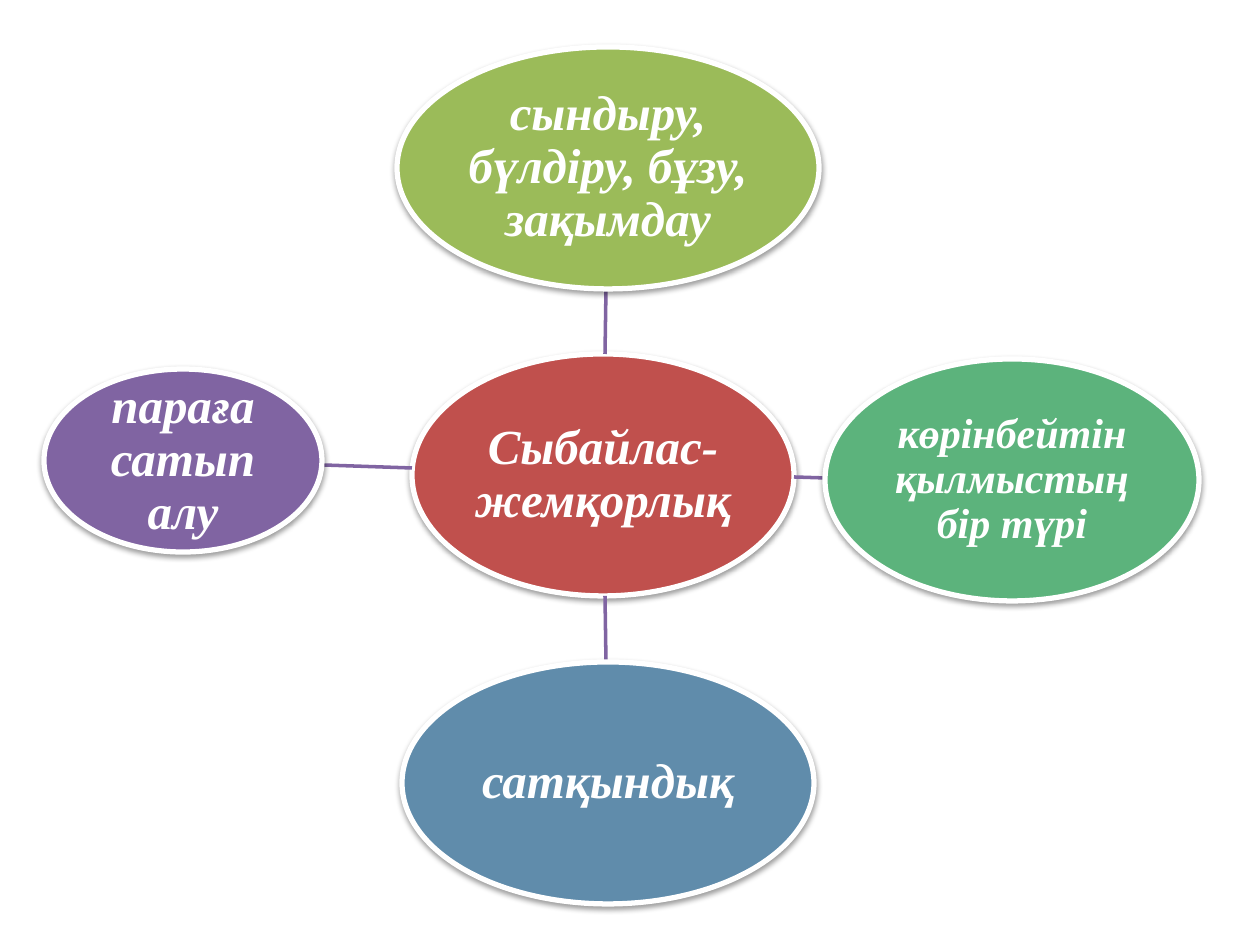
from pptx import Presentation
from pptx.dml.color import RGBColor
from pptx.enum.shapes import MSO_CONNECTOR as Connector, MSO_SHAPE as Shape
from pptx.enum.text import MSO_ANCHOR as Anchor, PP_ALIGN as Align
from pptx.oxml import parse_xml
from pptx.oxml.ns import nsdecls, qn
from pptx.util import Pt

PX = 914400 / 126

WHITE = RGBColor(0xFF, 0xFF, 0xFF)
RED = RGBColor(0xC0, 0x50, 0x4D)
LIME = RGBColor(0x9B, 0xBB, 0x59)
GREEN = RGBColor(0x5C, 0xB3, 0x7C)
BLUE = RGBColor(0x60, 0x8C, 0xAB)
PURPLE = RGBColor(0x80, 0x64, 0xA2)

SHADOW = (
    f'<a:outerShdw {nsdecls("a")} blurRad="40000" dist="20000" dir="5400000" '
    'rotWithShape="0"><a:srgbClr val="000000"><a:alpha val="38000"/>'
    '</a:srgbClr></a:outerShdw>'
)


def emu(*lengths):
    return [round(length * PX) for length in lengths]


class RadialMap:
    font_name = "Times New Roman"
    inset = 3

    def __init__(self, page):
        self.page = page

    def bubble(self, box, fill, text, size=28):
        oval = self.page.shapes.add_shape(Shape.OVAL, *emu(*box))
        oval.fill.solid()
        oval.fill.fore_color.rgb = fill
        oval.line.color.rgb = WHITE
        oval.line.width = Pt(3)
        oval.shadow.inherit = False
        oval._element.spPr.find(qn("a:effectLst")).append(parse_xml(SHADOW))

        frame = oval.text_frame
        frame.word_wrap = True
        frame.vertical_anchor = Anchor.MIDDLE
        for side in ("left", "top", "right", "bottom"):
            setattr(frame, f"margin_{side}", emu(self.inset)[0])
        para = frame.paragraphs[0]
        para.text = text
        para.alignment = Align.CENTER
        para.line_spacing = 0.9
        font = para.font
        font.name = self.font_name
        font.size = Pt(size)
        font.bold = font.italic = True
        font.color.rgb = WHITE

    def spoke(self, ends):
        line = self.page.shapes.add_connector(Connector.STRAIGHT, *emu(*ends))
        line.line.color.rgb = PURPLE
        line.line.width = Pt(2)
        line._element.spPr.append(parse_xml(f'<a:effectLst {nsdecls("a")}/>'))


def main():
    deck = Presentation()
    deck.slide_width, deck.slide_height = emu(1260, 945)
    radial = RadialMap(deck.slides.add_slide(deck.slide_layouts[6]))

    # Central term
    radial.bubble((412, 354, 382, 242), RED, "Сыбайлас-жемқорлық")

    # Meanings around it: spoke, box, colour, text, size
    meanings = [
        ((605, 354, 606, 289), (397, 47, 422, 242), LIME,
         "сындыру, бүлдіру, бұзу, зақымдау", 28),
        ((794, 477, 825, 478), (825, 359, 374, 242), GREEN,
         "көрінбейтін қылмыстың бір түрі", 24),
        ((605, 596, 606, 662), (402, 662, 412, 242), BLUE, "сатқындық", 28),
        ((412, 468, 323, 465), (44, 369, 278, 183), PURPLE,
         "параға сатып алу", 28),
    ]
    for ends, box, fill, text, size in meanings:
        radial.spoke(ends)
        radial.bubble(box, fill, text, size)

    deck.save("out.pptx")


if __name__ == "__main__":
    main()
